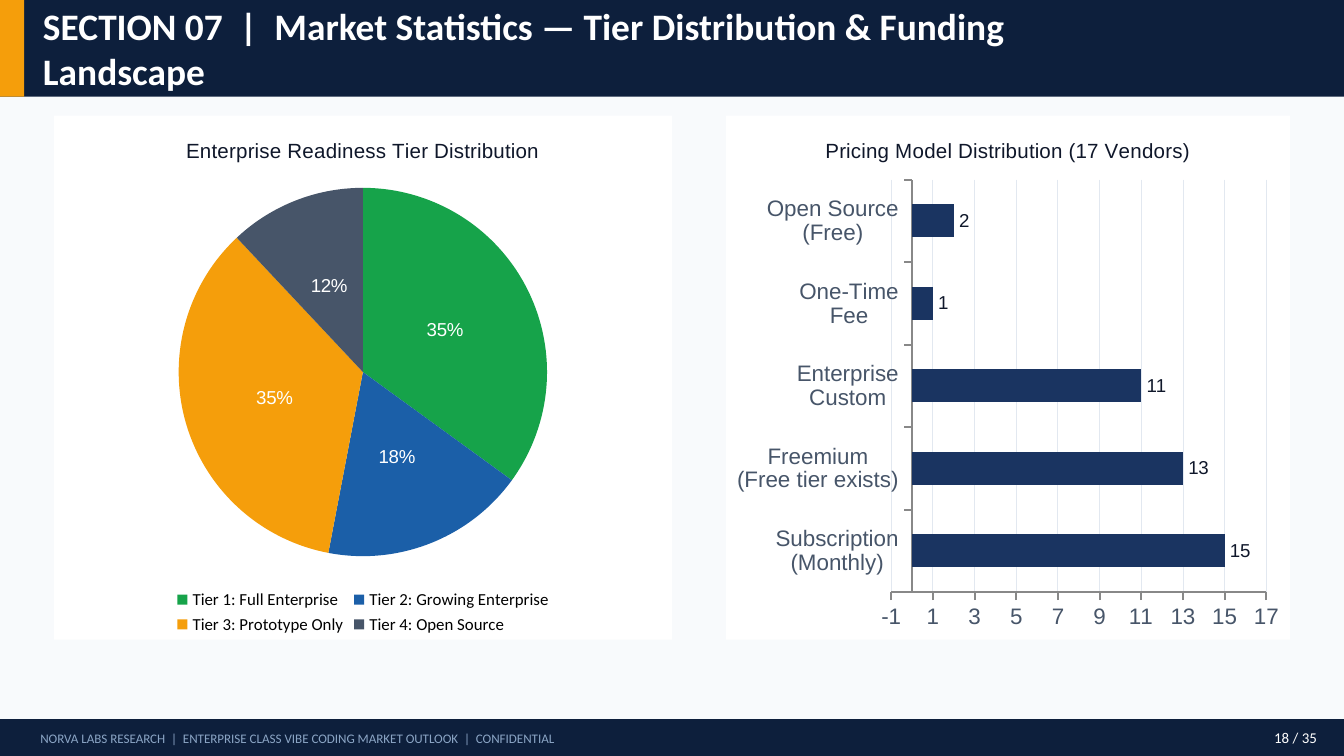
"""Build the market statistics slide with a tier pie and a pricing bar chart."""
from lxml import etree
from pptx import Presentation, util as u
from pptx.chart import data as cd
from pptx.dml.color import RGBColor
from pptx.enum import chart as ec, shapes, text
from pptx.oxml import ns

NAVY, AMBER, WHITE, INK, SLATE = "0D1F3C", "F59E0B", "FFFFFF", "0F172A", "475569"
W, H, BAR_H, FOOT_Y, FOOT_H = 720, 405, 51.84, 385.2, 20.16
CHART_Y, CHART_H = 61.92, 280.8


def rgb(value):
    return RGBColor.from_string(value)


class Deck:
    base = {"name": "Calibri", "bold": False}

    def __init__(self, prs):
        self.s = prs.slides.add_slide(prs.slide_layouts[6])

    def font(self, f, color, size, **fmt):
        for key, val in {**self.base, "size": u.Pt(size), **fmt}.items():
            setattr(f, key, val)
        f.color.rgb = rgb(color)

    def fill(self, fmt, color):
        fmt.fill.solid()
        fmt.fill.fore_color.rgb = rgb(color)

    def line(self, fmt, color, width):
        fmt.line.color.rgb = rgb(color)
        fmt.line.width = u.Pt(width)

    def background(self, color):
        self.fill(self.s.background, color)

    def rect(self, x, y, w, h, color):
        sp = self.s.shapes.add_shape(shapes.MSO_SHAPE.RECTANGLE, *map(u.Pt, (x, y, w, h)))
        sp.shadow.inherit = False
        self.fill(sp, color)
        sp.line.fill.background()

    def text(self, x, y, w, h, words, color, size, align=text.PP_ALIGN.LEFT, **fmt):
        tf = self.s.shapes.add_textbox(*map(u.Pt, (x, y, w, h))).text_frame
        frame = dict.fromkeys(("margin_left", "margin_right", "margin_top", "margin_bottom"), 0)
        frame.update(word_wrap=True, vertical_anchor=text.MSO_ANCHOR.MIDDLE)
        for key, val in frame.items():
            setattr(tf, key, val)
        p = tf.paragraphs[0]
        p.alignment = align
        r = p.add_run()
        r.text = words
        self.font(r.font, color, size, **fmt)

    def chart(self, kind, x, w, title, values):
        data = cd.CategoryChartData()
        data.categories = list(values)
        data.add_series("Series 1", list(values.values()))
        box = map(u.Pt, (x, CHART_Y, w, CHART_H))
        ch = self.s.shapes.add_chart(kind, *box, data).chart
        self.font(ch.font, "000000", 10)
        ch.has_title = True
        ch.chart_title.include_in_layout = False
        tf = ch.chart_title.text_frame
        tf.text = title
        self.font(tf.paragraphs[0].runs[0].font, INK, 11, name="Arial")
        pr = etree.Element(ns.qn("c:spPr"))
        solid = etree.SubElement(pr, ns.qn("a:solidFill"))
        etree.SubElement(solid, ns.qn("a:srgbClr"), val=WHITE)
        etree.SubElement(etree.SubElement(pr, ns.qn("a:ln")), ns.qn("a:noFill"))
        ch._chartSpace.find(ns.qn("c:chart")).addnext(pr)
        return ch

    def labels(self, plot, color, **fmt):
        plot.has_data_labels = True
        for key, val in {"number_format_is_linked": False, **fmt}.items():
            setattr(plot.data_labels, key, val)
        self.font(plot.data_labels.font, color, 10, name="Arial")

    def pie(self, x, w, title, values, colors):
        ch = self.chart(ec.XL_CHART_TYPE.PIE, x, w, title, values)
        plot = ch.plots[0]
        plot.vary_by_categories = True
        self.line(plot.series[0].format, "F9F9F9", 0.75)
        for i, color in enumerate(colors):
            self.fill(plot.series[0].points[i].format, color)
        self.labels(plot, WHITE, number_format="0%", show_percentage=True,
                    show_value=False, position=ec.XL_LABEL_POSITION.CENTER)
        ch.has_legend = True
        ch.legend.position = ec.XL_LEGEND_POSITION.BOTTOM
        ch.legend.include_in_layout = False
        self.font(ch.legend.font, "000000", 9)

    def bars(self, x, w, title, values, color, low, high, step):
        ch = self.chart(ec.XL_CHART_TYPE.BAR_CLUSTERED, x, w, title, values)
        ch.has_legend = False
        plot = ch.plots[0]
        plot.vary_by_categories = False
        plot.gap_width = 150
        self.fill(plot.series[0].format, color)
        self.labels(plot, INK, number_format="#,##0", show_value=True,
                    position=ec.XL_LABEL_POSITION.OUTSIDE_END)
        for axis in (ch.category_axis, ch.value_axis):
            axis.major_tick_mark = ec.XL_TICK_MARK.OUTSIDE
            self.font(axis.tick_labels.font, SLATE, 12, name="Arial")
            self.line(axis.format, "888888", 1)
        scale = {"minimum_scale": low, "maximum_scale": high, "major_unit": step,
                 "has_major_gridlines": True,
                 "tick_label_position": ec.XL_TICK_LABEL_POSITION.LOW}
        for key, val in scale.items():
            setattr(ch.value_axis, key, val)
        self.line(ch.value_axis.major_gridlines.format, "E2E8F0", 0.5)


def main():
    prs = Presentation()
    prs.slide_width, prs.slide_height = u.Pt(W), u.Pt(H)
    d = Deck(prs)
    d.background("F8FAFC")
    d.rect(0, 0, W, BAR_H, NAVY)
    d.rect(0, 0, 12.96, BAR_H, AMBER)
    d.text(23.04, 0, 540, BAR_H,
           "SECTION 07  |  Market Statistics — Tier Distribution & Funding Landscape",
           WHITE, 20, bold=True)
    tiers = {"Tier 1: Full Enterprise": 35, "Tier 2: Growing Enterprise": 18,
             "Tier 3: Prototype Only": 35, "Tier 4: Open Source": 12}
    d.pie(28.8, 331.2, "Enterprise Readiness Tier Distribution", tiers,
          ("16A34A", "1B5FA8", AMBER, SLATE))
    pricing = {"Subscription\n(Monthly)": 15, "Freemium\n(Free tier exists)": 13,
               "Enterprise\nCustom": 11, "One-Time\nFee": 1, "Open Source\n(Free)": 2}
    d.bars(388.8, 302.4, "Pricing Model Distribution (17 Vendors)", pricing,
           "1A3461", -1, 17, 2)
    d.rect(0, FOOT_Y, W, FOOT_H, NAVY)
    d.text(21.6, FOOT_Y, 576, FOOT_H,
           "NORVA LABS RESEARCH  |  ENTERPRISE CLASS VIBE CODING MARKET OUTLOOK  |  CONFIDENTIAL",
           "8BA5C5", 7)
    d.text(648, FOOT_Y, 57.6, FOOT_H, "18 / 35", WHITE, 8, text.PP_ALIGN.RIGHT)
    prs.save("out.pptx")


if __name__ == "__main__":
    main()
